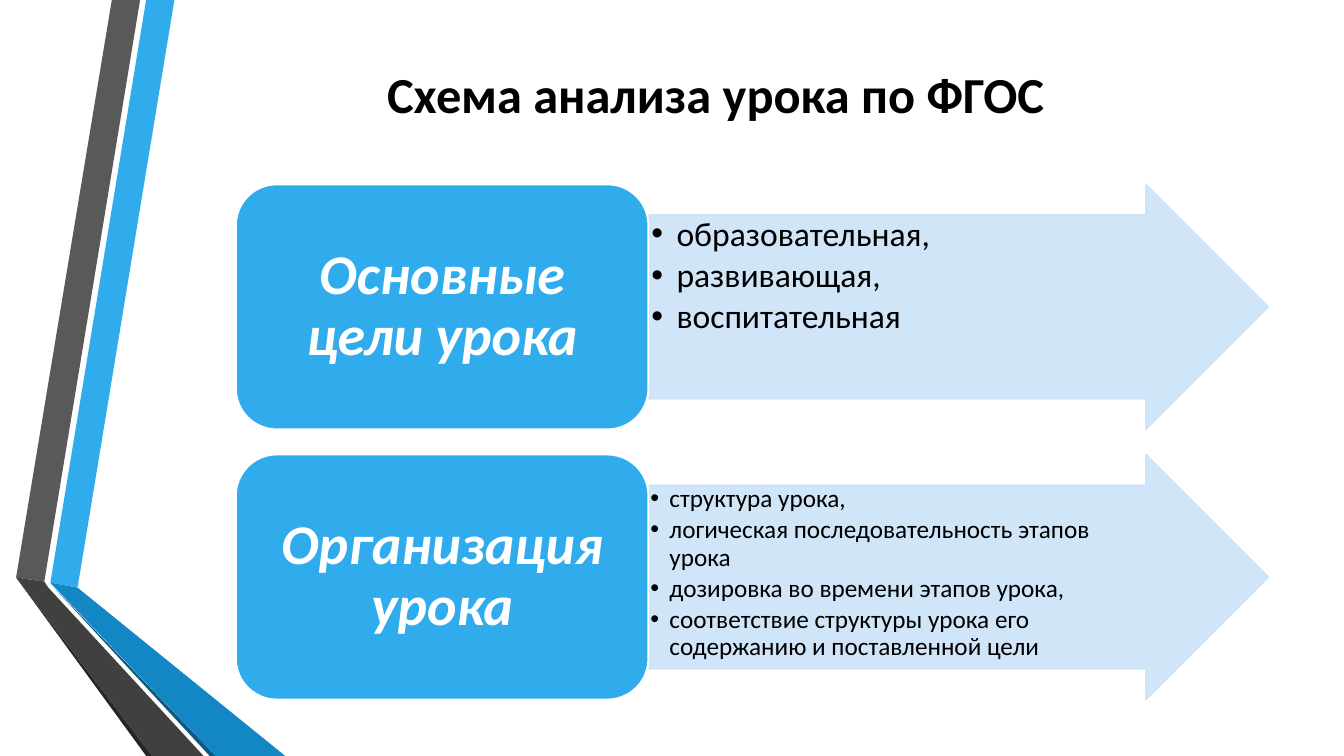
"""Build the lesson analysis scheme slide."""
from dataclasses import dataclass

from lxml import etree
from pptx import Presentation
from pptx.dml import color
from pptx.enum import shapes, text
from pptx.oxml import ns
from pptx.util import Inches, Pt

TITLE = "Схема анализа урока по ФГОС"
ROWS = [
    ("Основные цели урока", 24, 0.25, 0.02,
     ["образовательная,", "развивающая,", "воспитательная"]),
    ("Организация урока", 18, 0.19, 0.01,
     ["структура урока,",
      "логическая последовательность этапов урока",
      "дозировка во времени этапов урока,",
      "соответствие структуры урока его содержанию и поставленной цели"]),
]
BANDS = [
    ("30ACEC", [(0.5, 5.78), (0.77, 5.83), (1.73, 0), (1.45, 0)]),
    ("595959", [(1.39, 0), (1.11, 0), (0.16, 5.73), (0.44, 5.77)]),
    ("262626", [(0.16, 5.73), (1.45, 7.5), (1.51, 7.5)]),
    ("0C5A82", [(0.5, 5.79), (2.08, 7.5), (2.14, 7.5)]),
    ("1287C3", [(0.5, 5.78), (2.14, 7.5), (2.83, 7.5), (0.77, 5.83)]),
    ("404040", [(2.02, 7.5), (0.48, 5.83), (0.44, 5.77), (0.16, 5.73), (1.51, 7.5)]),
]


@dataclass(frozen=True)
class Theme:
    font: str = "Calibri"
    ink: str = "000000"
    white: str = "FFFFFF"
    blue: str = "30ACEC"
    pale: str = "CDE3F8"
    title: int = 36
    label: int = 40
    line: float = 1.25
    alpha: int = 90


T = Theme()
LEFT, TOP, HIGH, STEP = 2.34, 1.83, 2.43, 2.68
BOX, ARROW, SPAN = 4.09, 6.44, 6.14


def rgb(code):
    return color.RGBColor.from_string(code)


def write(para, words, size, ink, bold=False, slant=False):
    run = para.add_run()
    run.text = words
    font = run.font
    font.name, font.size, font.bold, font.italic = T.font, Pt(size), bold, slant
    font.color.rgb = rgb(ink)


def paint(shape, fill, edge=None):
    shape.shadow.inherit = False
    shape.fill.solid()
    shape.fill.fore_color.rgb = rgb(fill)
    if edge:
        shape.line.color.rgb = rgb(edge)
        shape.line.width = Pt(T.line)
    else:
        shape.line.fill.background()


def fade(shape):
    for tone in shape.element.spPr.iter(ns.qn("a:srgbClr")):
        etree.SubElement(tone, ns.qn("a:alpha"), val=str(T.alpha * 1000))


def inset(frame, left, top, right, bottom):
    frame.word_wrap = True
    frame.margin_left, frame.margin_top = Inches(left), Inches(top)
    frame.margin_right, frame.margin_bottom = Inches(right), Inches(bottom)


def block(slide, kind, left, top, width):
    return slide.shapes.add_shape(
        kind, Inches(left), Inches(top), Inches(width), Inches(HIGH))


def draw_band(slide, fill, dots):
    start, *rest = [(Inches(x), Inches(y)) for x, y in dots]
    path = slide.shapes.build_freeform(*start)
    path.add_line_segments(rest, close=True)
    paint(path.convert_to_shape(), fill)


def draw_title(slide):
    title = slide.shapes.title
    title.left, title.top = Inches(1.62), Inches(0.75)
    title.width, title.height = Inches(10.96), Inches(0.96)
    frame = title.text_frame
    frame.word_wrap = True
    frame.vertical_anchor = text.MSO_ANCHOR.MIDDLE
    para = frame.paragraphs[0]
    para.alignment = text.PP_ALIGN.CENTER
    para.font.size = Pt(T.title)
    write(para, TITLE, T.title, T.ink, bold=True)
    para.add_line_break()


def draw_arrow(slide, top, size, indent, pad, items):
    arrow = block(slide, shapes.MSO_SHAPE.RIGHT_ARROW, ARROW, top, SPAN)
    arrow.adjustments[0], arrow.adjustments[1] = 0.75, 0.5
    paint(arrow, T.pale, T.pale)
    fade(arrow)
    frame = arrow.text_frame
    inset(frame, pad, pad, 0.61 + pad, pad)
    frame.vertical_anchor = text.MSO_ANCHOR.TOP
    for i, item in enumerate(items):
        para = frame.add_paragraph() if i else frame.paragraphs[0]
        para.alignment = text.PP_ALIGN.LEFT
        para.line_spacing, para.space_after = 0.9, Pt(size * 0.15)
        props = para._p.get_or_add_pPr()
        props.set("marL", str(Inches(indent)))
        props.set("indent", str(-Inches(indent)))
        etree.SubElement(props, ns.qn("a:buFont"), typeface="Arial")
        etree.SubElement(props, ns.qn("a:buChar"), char="•")
        write(para, item, size, T.ink)


def draw_label(slide, top, words):
    box = block(slide, shapes.MSO_SHAPE.ROUNDED_RECTANGLE, LEFT, top, BOX)
    paint(box, T.blue, T.white)
    frame = box.text_frame
    inset(frame, 0.17, 0.08, 0.17, 0.08)
    frame.vertical_anchor = text.MSO_ANCHOR.MIDDLE
    para = frame.paragraphs[0]
    para.alignment, para.line_spacing = text.PP_ALIGN.CENTER, 0.9
    write(para, words, T.label, T.white, bold=True, slant=True)


def main():
    deck = Presentation()
    deck.slide_width, deck.slide_height = Inches(13.33), Inches(7.5)
    slide = deck.slides.add_slide(deck.slide_layouts[5])
    for fill, dots in BANDS:
        draw_band(slide, fill, dots)
    draw_title(slide)
    for i, (label, size, indent, pad, items) in enumerate(ROWS):
        top = TOP + i * STEP
        draw_arrow(slide, top, size, indent, pad, items)
        draw_label(slide, top, label)
    deck.save("out.pptx")


if __name__ == "__main__":
    main()
